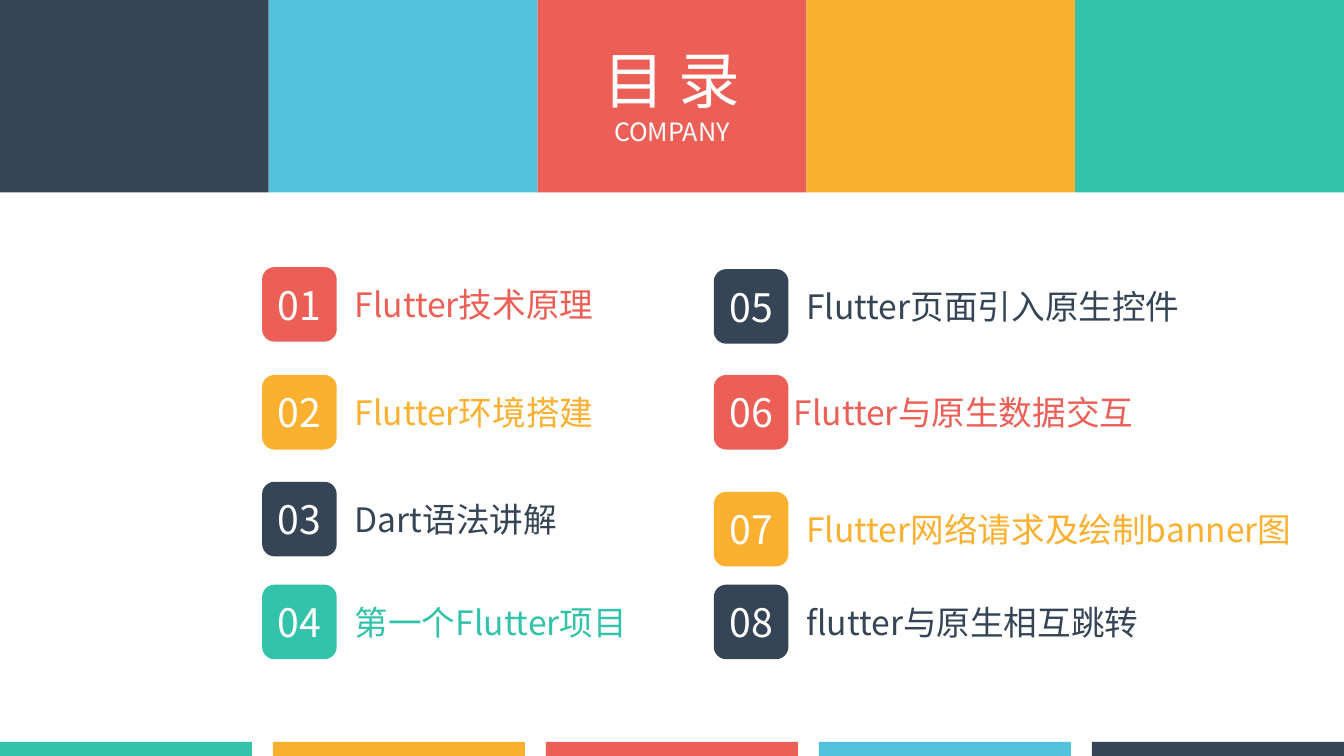
from dataclasses import dataclass

from lxml import etree
from pptx import Presentation
from pptx import util as u
from pptx.dml.color import RGBColor
from pptx.enum import shapes, text
from pptx.oxml import ns

TITLE = ("目 录", "COMPANY")
HEADER = ("navy", "sky", "coral", "amber", "teal")
FOOTER = HEADER[::-1]
FOOTER = ("teal", "amber", "coral", "sky", "navy")
LEFT_TOPICS = [
    ("01", "Flutter技术原理", "coral", 2.65),
    ("02", "Flutter环境搭建", "amber", 3.72),
    ("03", "Dart语法讲解", "navy", 4.78),
    ("04", "第一个Flutter项目", "teal", 5.8),
]
RIGHT_TOPICS = [
    ("05", "Flutter页面引入原生控件", "navy", 2.67),
    ("06", " Flutter与原生数据交互", "coral", 3.72),
    ("07", "Flutter网络请求及绘制banner图", "amber", 4.88),
    ("08", "flutter与原生相互跳转", "navy", 5.8),
]
LABEL_SHIFTS = {"06": -0.2}


@dataclass(frozen=True)
class Theme:
    navy: str = "364555"
    sky: str = "52C2DC"
    coral: str = "EB5F56"
    amber: str = "FCB030"
    teal: str = "33C3AB"
    white: str = "FFFFFF"
    font: str = "Noto Sans CJK SC"
    title: int = 44
    subtitle: int = 18
    number: int = 28
    label: int = 24


THEME = Theme()
WIDTH, HEIGHT = 13.33, 7.5
HEADER_HEIGHT = 1.91
FOOTER_HEIGHT, FOOTER_WIDTH = 0.14, 2.5
BADGE, LABEL_OFFSET, LABEL_HEIGHT = 0.74, 0.82, 0.5
COLUMNS = [(2.6, 5.0, LEFT_TOPICS), (7.08, 5.43, RIGHT_TOPICS)]


def color(name):
    return RGBColor.from_string(getattr(THEME, name))


def write(para, content, *, size, fill, align=text.PP_ALIGN.LEFT):
    para.alignment = align
    span = para.add_run()
    span.text = content
    span.font.name = THEME.font
    span.font.size = u.Pt(size)
    span.font.color.rgb = color(fill)
    properties = span.font._element
    etree.SubElement(properties, ns.qn("a:ea"), typeface=THEME.font)


def add_block(parent, kind, left, top, width, height, fill):
    block = parent.add_shape(kind, *map(u.Inches, (left, top, width, height)))
    block.shadow.inherit = False
    block.fill.solid()
    block.fill.fore_color.rgb = color(fill)
    block.line.fill.background()
    return block


def add_strip(parent, fills, top, width, height):
    pitch = (WIDTH - width) / (len(fills) - 1)
    for index, fill in enumerate(fills):
        add_block(parent, shapes.MSO_SHAPE.RECTANGLE,
                  index * pitch, top, width, height, fill)


def add_text_box(parent, left, top, width, height, wrap):
    box = parent.add_textbox(*map(u.Inches, (left, top, width, height)))
    box.text_frame.word_wrap = wrap
    box.text_frame.auto_size = text.MSO_AUTO_SIZE.SHAPE_TO_FIT_TEXT
    return box.text_frame


def add_topic(parent, left, label_width, number, label, fill, top):
    group = parent.add_group_shape().shapes
    badge = add_block(group, shapes.MSO_SHAPE.ROUNDED_RECTANGLE,
                      left, top, BADGE, BADGE, fill)
    badge.text_frame.vertical_anchor = text.MSO_ANCHOR.MIDDLE
    write(badge.text_frame.paragraphs[0], number, size=THEME.number,
          fill="white", align=text.PP_ALIGN.CENTER)
    label_left = left + LABEL_OFFSET + LABEL_SHIFTS.get(number, 0)
    label_top = top + (BADGE - LABEL_HEIGHT) / 2
    frame = add_text_box(group, label_left, label_top,
                         label_width, LABEL_HEIGHT, True)
    write(frame.paragraphs[0], label, size=THEME.label, fill=fill)


def main():
    deck = Presentation()
    deck.slide_width, deck.slide_height = u.Inches(WIDTH), u.Inches(HEIGHT)
    page = deck.slides.add_slide(deck.slide_layouts[6]).shapes

    add_strip(page, HEADER, 0, WIDTH / len(HEADER), HEADER_HEIGHT)
    add_strip(page, FOOTER, HEIGHT - FOOTER_HEIGHT, FOOTER_WIDTH, FOOTER_HEIGHT)

    frame = add_text_box(page, 5.85, 0.37, 1.63, 1.18, False)
    frame.add_paragraph()
    for para, content, size in zip(frame.paragraphs, TITLE,
                                   (THEME.title, THEME.subtitle)):
        write(para, content, size=size, fill="white",
              align=text.PP_ALIGN.CENTER)

    for left, label_width, topics in COLUMNS:
        for topic in topics:
            add_topic(page, left, label_width, *topic)

    deck.save("out.pptx")


if __name__ == "__main__":
    main()
